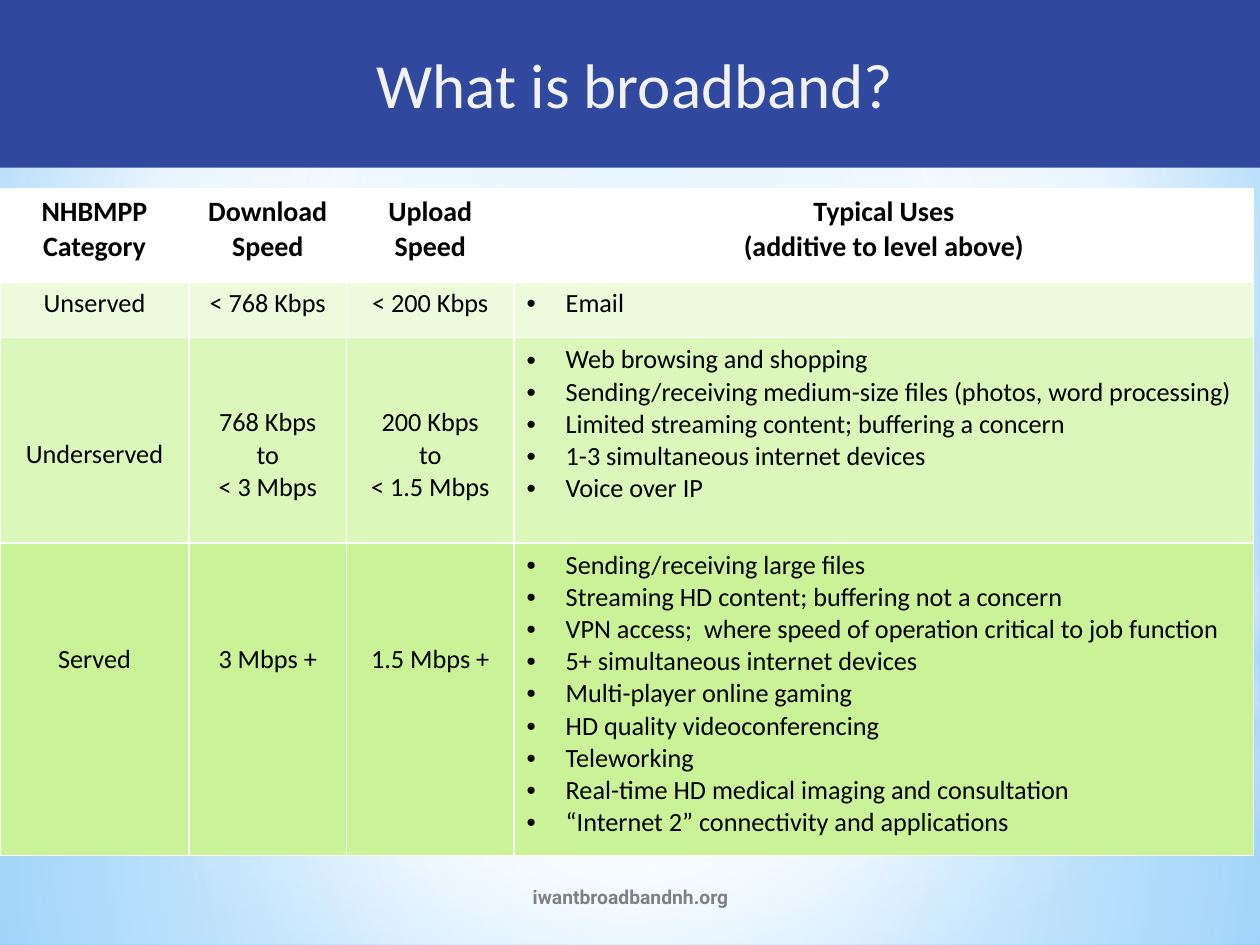
from lxml import etree
from pptx import Presentation
from pptx.dml.color import RGBColor
from pptx.enum.shapes import MSO_SHAPE
from pptx.enum.text import MSO_ANCHOR, PP_ALIGN
from pptx.oxml.ns import qn
from pptx.util import Inches, Pt

RECT, OVAL = MSO_SHAPE.RECTANGLE, MSO_SHAPE.OVAL
MIDDLE = MSO_ANCHOR.MIDDLE
CENTER, LEFT = PP_ALIGN.CENTER, PP_ALIGN.LEFT

COLORS = {
    "white": "FFFFFF", "black": "000000", "banner": "31489F",
    "title": "F2F2F2", "footer": "808080", "sky": "9ED5FF",
    "deep_sky": "5BB9FF", "haze": "B4DCFA",
    "unserved": "EDFBDC", "underserved": "DCF7BA", "served": "CAF297",
}
FORMATS = {
    "title": {"name": "Calibri", "size": Pt(36), "bold": False, "color": "title"},
    "footer": {"name": "Roboto", "size": Pt(11), "bold": True, "color": "footer"},
    "header": {"name": "Calibri", "size": Pt(16), "bold": True, "color": "black"},
    "body": {"name": "Calibri", "size": Pt(15), "bold": False, "color": "black"},
}
CENTERED = (50, 50, 50, 50)
LINE = 0.25  # height of one line of body text, inches

# Glow layers: shape, box, gradient stops (position, color, opacity), focus
GLOWS = [
    (RECT, (0, 5.58, 10, 1.92),
     [(0, "white", 91), (37, "white", 76), (100, "haze", 79)], CENTERED),
    (RECT, (0, 0, 10, 5.58),
     [(0, "white", 89), (48, "white", 62), (100, "haze", 79)], CENTERED),
    (RECT, (0, 4.12, 10, 2.5),
     [(0, "white", 0), (29, "white", 30), (45, "haze", 40),
      (55, "white", 26), (65, "haze", 60), (100, "white", 0)], None),
    (OVAL, (0, 1.75, 10, 5.58),
     [(0, "white", 100), (56, "white", 0)], CENTERED),
]
COL_WIDTHS = [1.5, 1.25, 1.33, 5.87]
HEADERS = [["NHBMPP", "Category"], ["Download Speed"], ["Upload", "Speed"],
           ["Typical Uses", "(additive to level above)"]]
# Rows: fill, height, lines skipped above each label, labels, uses
ROWS = [
    ("unserved", 0.45, (0, 0, 0),
     [["Unserved"], ["< 768 Kbps"], ["< 200 Kbps"]], ["Email"]),
    ("underserved", 1.63, (3, 2, 2),
     [["Underserved"], ["768 Kbps", "to", "< 3 Mbps"],
      ["200 Kbps", "to", "< 1.5 Mbps"]],
     ["Web browsing and shopping",
      "Sending/receiving medium-size files (photos, word processing)",
      "Limited streaming content; buffering a concern",
      "1-3 simultaneous internet devices",
      "Voice over IP"]),
    ("served", 2.48, (3, 3, 3),
     [["Served"], ["3 Mbps +"], ["1.5 Mbps +"]],
     ["Sending/receiving large files",
      "Streaming HD content; buffering not a concern",
      "VPN access;  where speed of operation critical to job function",
      "5+ simultaneous internet devices",
      "Multi-player online gaming",
      "HD quality videoconferencing",
      "Teleworking",
      "Real-time HD medical imaging and consultation",
      "“Internet 2” connectivity and applications"]),
]


def rgb(color):
    return RGBColor.from_string(COLORS[color])


def swap_gradient(parent, stops, focus):
    """Replace a solid fill by a gradient: circular with a focus, else vertical."""
    grad = etree.Element(qn("a:gradFill"), rotWithShape="1")
    stop_list = etree.SubElement(grad, qn("a:gsLst"))
    for position, color, opacity in stops:
        gs = etree.SubElement(stop_list, qn("a:gs"), pos=str(position * 1000))
        clr = etree.SubElement(gs, qn("a:srgbClr"), val=COLORS[color])
        if opacity < 100:
            etree.SubElement(clr, qn("a:alpha"), val=str(opacity * 1000))
    if focus:
        circle = etree.SubElement(grad, qn("a:path"), path="circle")
        sides = {side: str(v * 1000) for side, v in zip("ltrb", focus)}
        etree.SubElement(circle, qn("a:fillToRect"), **sides)
    else:
        etree.SubElement(grad, qn("a:lin"), ang="5400000", scaled="0")
    parent.replace(parent.find(qn("a:solidFill")), grad)


def add_borders(cell, bottom):
    tcPr = cell._tc.get_or_add_tcPr()
    for i, (side, width) in enumerate(zip("LRTB", (1, 1, 1, bottom))):
        ln = etree.Element(qn(f"a:ln{side}"), w=str(Pt(width)))
        fill = etree.SubElement(ln, qn("a:solidFill"))
        etree.SubElement(fill, qn("a:srgbClr"), val=COLORS["white"])
        tcPr.insert(i, ln)


class SlideBuilder:
    def __init__(self, prs):
        self.slide = prs.slides.add_slide(prs.slide_layouts[5])

    def background(self, stops, focus):
        self.slide.background.fill.solid()
        swap_gradient(self.slide._element.find(".//" + qn("p:bgPr")), stops, focus)

    def glow(self, kind, box, stops, focus):
        sp = self.slide.shapes.add_shape(kind, *map(Inches, box))
        sp.shadow.inherit = False
        sp.line.fill.background()
        sp.fill.solid()
        swap_gradient(sp._element.spPr, stops, focus)

    def add_lines(self, tf, lines, style, align=CENTER, bullets=False):
        for i, line in enumerate(lines):
            p = tf.add_paragraph() if i else tf.paragraphs[0]
            p.alignment = align
            if bullets:
                pPr = p._p.get_or_add_pPr()
                pPr.set("marL", str(Inches(0.31)))
                pPr.set("indent", str(Inches(-0.31)))
                etree.SubElement(pPr, qn("a:buFont"), typeface="Arial")
                etree.SubElement(pPr, qn("a:buChar"), char="•")
            r = p.add_run()
            r.text = line
            for name, value in FORMATS[style].items():
                if name == "color":
                    r.font.color.rgb = rgb(value)
                else:
                    setattr(r.font, name, value)

    def title(self, text, box):
        sp = self.slide.shapes.title
        sp.left, sp.top, sp.width, sp.height = map(Inches, box)
        sp.fill.solid()
        sp.fill.fore_color.rgb = rgb("banner")
        sp.text_frame.vertical_anchor = MIDDLE
        self.add_lines(sp.text_frame, [text], "title")
        self.slide.shapes._spTree.append(sp._element)  # in front of the glows

    def text(self, text, box, style):
        tf = self.slide.shapes.add_textbox(*map(Inches, box)).text_frame
        tf.word_wrap = True
        tf.vertical_anchor = MIDDLE
        self.add_lines(tf, [text], style)

    def cell(self, cell, lines, style, fill, bottom=1, skip=0, **layout):
        cell.fill.solid()
        cell.fill.fore_color.rgb = rgb(fill)
        cell.margin_top = Inches(0.05 + skip * LINE)
        add_borders(cell, bottom)
        self.add_lines(cell.text_frame, lines, style, **layout)

    def table(self, left, top):
        heights = [0.73] + [row[1] for row in ROWS]
        table = self.slide.shapes.add_table(
            len(heights), len(COL_WIDTHS), Inches(left), Inches(top),
            Inches(sum(COL_WIDTHS)), Inches(sum(heights))).table
        for column, width in zip(table.columns, COL_WIDTHS):
            column.width = Inches(width)
        for row, height in zip(table.rows, heights):
            row.height = Inches(height)
        for c, lines in enumerate(HEADERS):
            self.cell(table.cell(0, c), lines, "header", "white", bottom=3)
        for r, (fill, _, skips, labels, uses) in enumerate(ROWS, 1):
            for c, (lines, skip) in enumerate(zip(labels, skips)):
                self.cell(table.cell(r, c), lines, "body", fill, skip=skip)
            self.cell(table.cell(r, 3), uses, "body", fill, align=LEFT, bullets=True)


def main():
    prs = Presentation()
    prs.slide_width, prs.slide_height = Inches(10), Inches(7.5)
    s = SlideBuilder(prs)
    s.background([(0, "sky", 100), (60, "white", 100), (100, "deep_sky", 100)],
                 (20, 10, 20, 60))
    for layer in GLOWS:
        s.glow(*layer)
    s.title("What is broadband?", (0, 0, 10.08, 1.33))
    s.text("iwantbroadbandnh.org", (3.42, 6.92, 3.17, 0.4), "footer")
    s.table(0, 1.5)
    prs.save("out.pptx")


if __name__ == "__main__":
    main()
